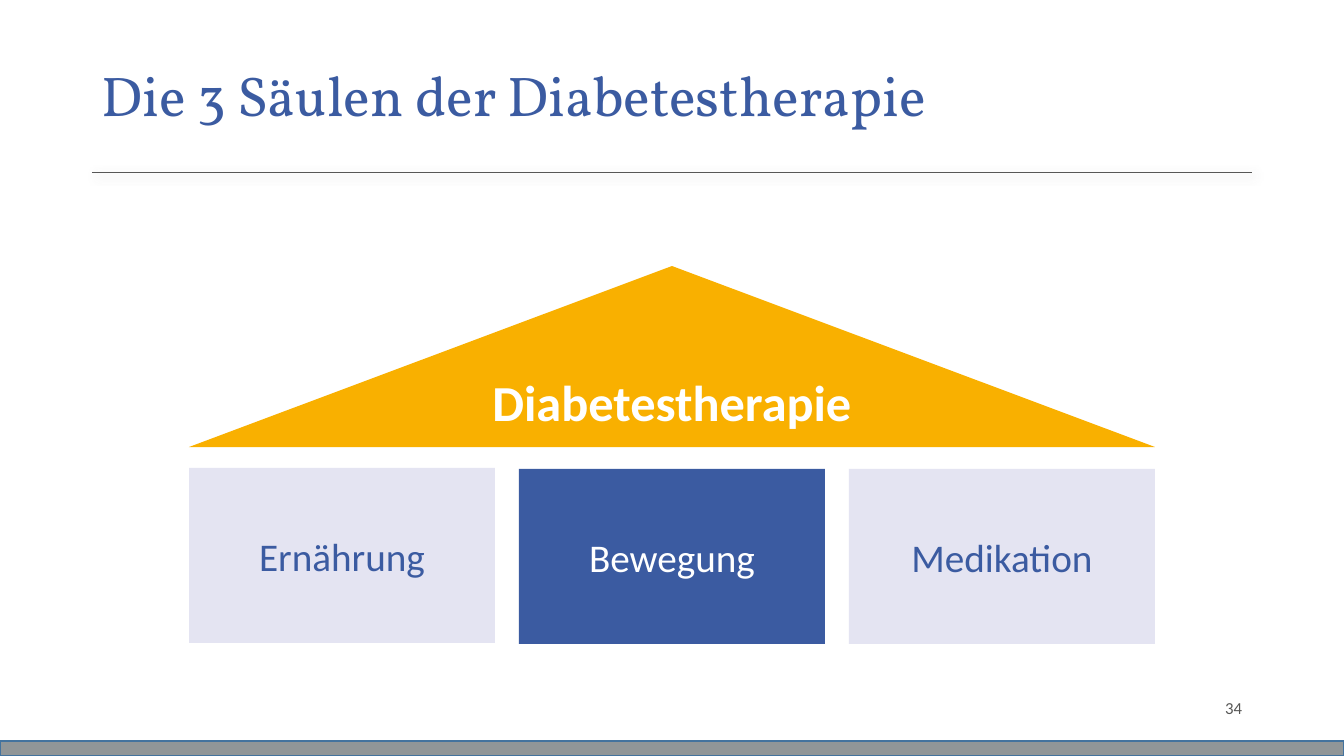
from dataclasses import dataclass

from lxml import etree
from pptx import Presentation
from pptx.dml.color import RGBColor
from pptx.enum.shapes import MSO_CONNECTOR, MSO_SHAPE
from pptx.enum.text import MSO_ANCHOR, PP_ALIGN
from pptx.oxml.ns import qn
from pptx.util import Emu, Pt

RECTANGLE = MSO_SHAPE.RECTANGLE
TRIANGLE = MSO_SHAPE.ISOSCELES_TRIANGLE
STRAIGHT = MSO_CONNECTOR.STRAIGHT
MIDDLE = MSO_ANCHOR.MIDDLE
LEFT, CENTER, RIGHT = PP_ALIGN.LEFT, PP_ALIGN.CENTER, PP_ALIGN.RIGHT

SLIDE_WIDTH, SLIDE_HEIGHT = 1344, 756
EMU_PER_PX = 914400 / 100.8


@dataclass(frozen=True)
class Theme:
    blue: str = "3B5BA1"
    lavender: str = "E4E4F2"
    amber: str = "F9B000"
    white: str = "FFFFFF"
    grey: str = "575756"
    footer_fill: str = "909698"
    footer_edge: str = "43739E"
    heading_font: str = "Vollkorn"
    body_font: str = "Calibri"
    title_size: int = 40
    roof_size: int = 36
    pillar_size: int = 28
    number_size: int = 12


THEME = Theme()


def px(length):
    return Emu(round(length * EMU_PER_PX))


def color(code):
    return RGBColor.from_string(code)


def write(owner, text, size, ink, align, font=THEME.body_font, bold=False):
    frame = owner.text_frame
    frame.word_wrap = True
    frame.vertical_anchor = MIDDLE
    paragraph = frame.paragraphs[0]
    paragraph.alignment = align
    run = paragraph.add_run()
    run.text = text
    run.font.name = font
    run.font.size = Pt(size)
    run.font.bold = bold
    run.font.color.rgb = color(ink)
    return paragraph


def add_label(slide, box, *text_style, **options):
    label = slide.shapes.add_textbox(*map(px, box))
    return write(label, *text_style, **options)


def add_block(slide, kind, box, fill, edge=None):
    block = slide.shapes.add_shape(kind, *map(px, box))
    block.shadow.inherit = False
    block.fill.solid()
    block.fill.fore_color.rgb = color(fill)
    if edge:
        block.line.color.rgb = color(edge)
        block.line.width = Pt(1)
    else:
        block.line.fill.background()
    return block


def add_title_rule(slide, left, right, y):
    rule = slide.shapes.add_connector(STRAIGHT, px(left), px(y), px(right), px(y))
    rule.line.color.rgb = color(THEME.grey)
    rule.line.width = Pt(0.5)
    # Soft shadow below the rule
    effects = etree.SubElement(rule._element.spPr, qn("a:effectLst"))
    shadow = etree.SubElement(effects, qn("a:outerShdw"), blurRad=str(Pt(7)),
                              dist=str(Pt(3)), dir=str(45 * 60000))
    tint = etree.SubElement(shadow, qn("a:srgbClr"), val=THEME.grey)
    etree.SubElement(tint, qn("a:alpha"), val="50000")


def add_pillars(slide, left, pitch, width, height):
    pillars = [
        ("Ernährung", 468, THEME.lavender, THEME.blue),
        ("Bewegung", 469, THEME.blue, THEME.white),
        ("Medikation", 469, THEME.lavender, THEME.blue),
    ]
    for index, (name, top, fill, ink) in enumerate(pillars):
        box = (left + index * pitch, top, width, height)
        pillar = add_block(slide, RECTANGLE, box, fill)
        write(pillar, name, THEME.pillar_size, ink, CENTER)


def main():
    deck = Presentation()
    deck.slide_width, deck.slide_height = px(SLIDE_WIDTH), px(SLIDE_HEIGHT)
    slide = deck.slides.add_slide(deck.slide_layouts[6])

    # Footer bar, title rule and slide number
    add_block(slide, RECTANGLE, (0, 741, SLIDE_WIDTH, 15),
              THEME.footer_fill, THEME.footer_edge)
    add_title_rule(slide, 92, 1252, 172)
    add_label(slide, (950, 688, 302, 40), "34", THEME.number_size, THEME.grey, RIGHT)

    # Title
    title = add_label(slide, (92, 39, 873, 119), "Die 3 Säulen der Diabetestherapie",
                      THEME.title_size, THEME.blue, LEFT, font=THEME.heading_font)
    title.line_spacing = 0.9

    # Pillars and roof
    add_pillars(slide, left=189, pitch=330, width=306, height=175)
    roof = add_block(slide, TRIANGLE, (189, 266, 966, 181), THEME.amber)
    write(roof, "Diabetestherapie", THEME.roof_size, THEME.white, CENTER, bold=True)

    deck.save("out.pptx")


if __name__ == "__main__":
    main()
